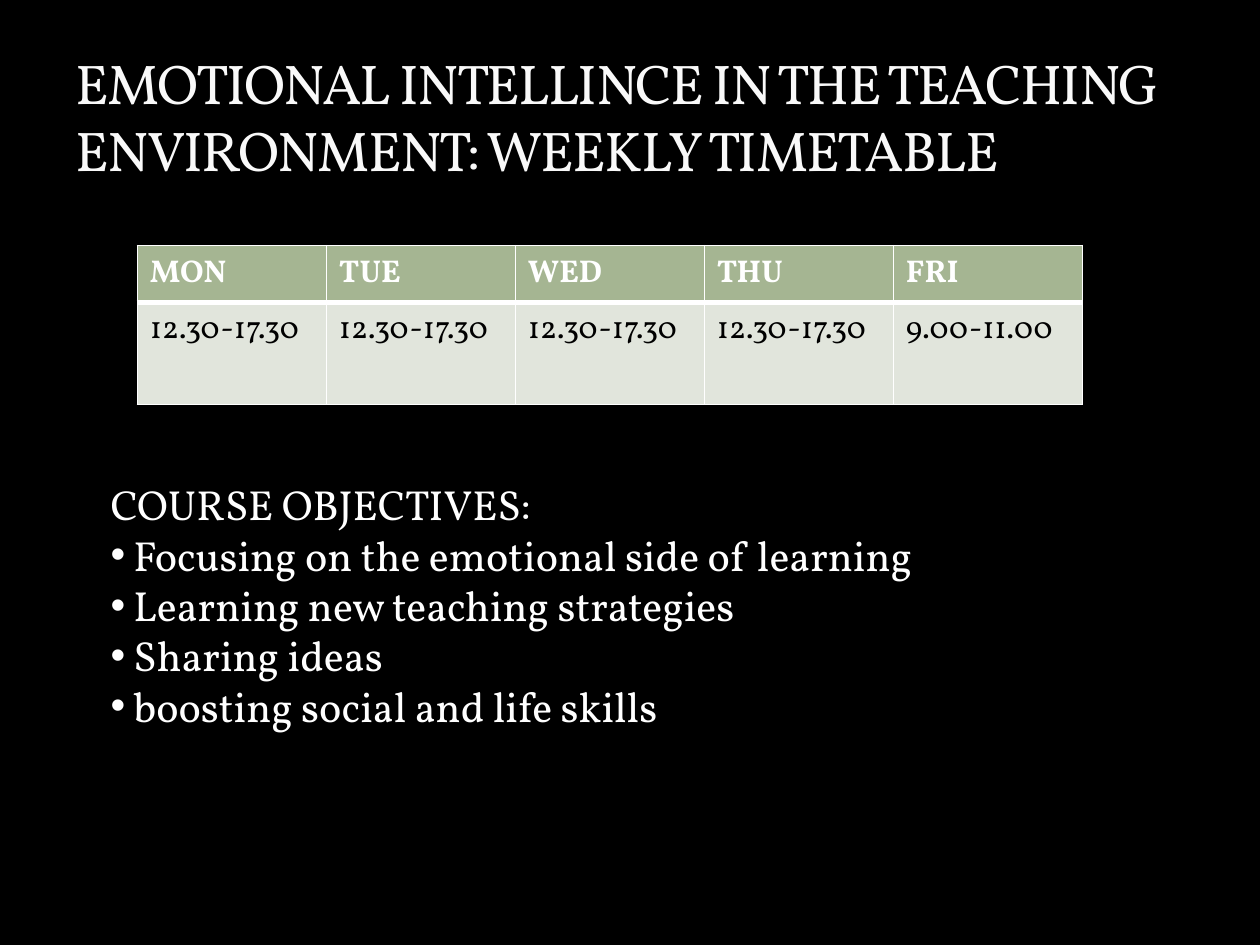
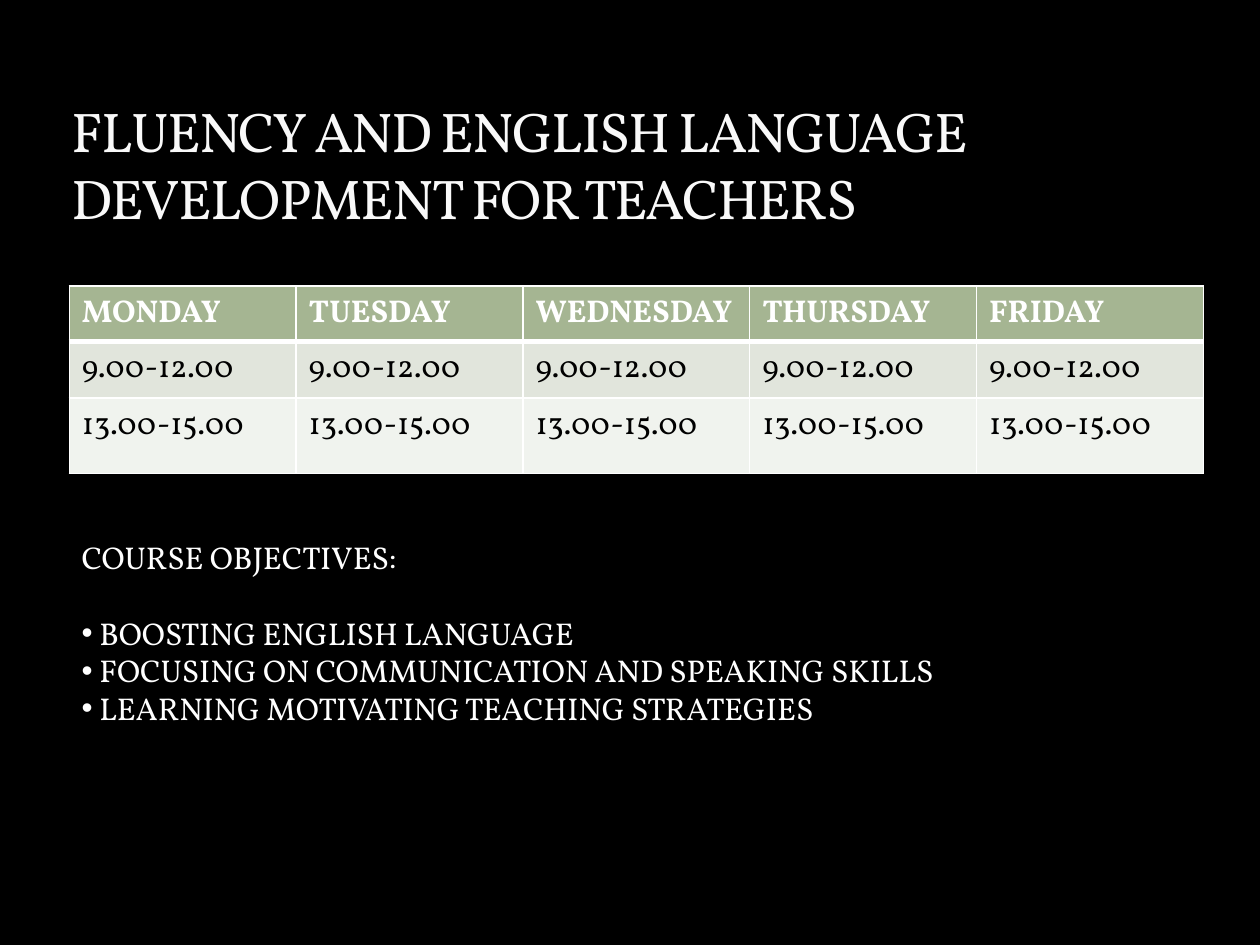
"""Build two timetable slides with course objectives."""
from lxml import etree
from pptx import Presentation
from pptx.dml.color import RGBColor
from pptx.enum.text import MSO_ANCHOR
from pptx.oxml.ns import qn
from pptx.util import Inches, Pt

BLACK = RGBColor(0x00, 0x00, 0x00)
WHITE = RGBColor(0xFF, 0xFF, 0xFF)
TITLE_WHITE = RGBColor(0xF9, 0xF9, 0xF9)
HEADER_GREEN = RGBColor(0xA5, 0xB5, 0x92)
ROW_FILLS = [RGBColor(0xE1, 0xE5, 0xDC), RGBColor(0xF0, 0xF3, 0xEE)]
FONT = "Vollkorn"

COURSES = [
    {
        "title": "EMOTIONAL INTELLINCE IN THE TEACHING ENVIRONMENT: WEEKLY TIMETABLE",
        "title_at": (0.5, 0.17),
        "days": ["MON", "TUE", "WED", "THU", "FRI"],
        "times": [["12.30-17.30"] * 4 + ["9.00-11.00"]],
        "table_at": (1.09, 1.95),
        "column_width": 1.5,
        "row_heights": [0.44, 0.81],
        "objectives": [
            "Focusing on the emotional side of learning",
            "Learning new teaching strategies",
            "Sharing ideas",
            "boosting social and life skills",
        ],
        "objectives_at": (0.78, 3.75, 8.05, 2.12),
        "size": 24,
        "heading_gap": 0,
    },
    {
        "title": "FLUENCY AND ENGLISH LANGUAGE DEVELOPMENT FOR TEACHERS",
        "title_at": (0.47, 0.55),
        "days": ["MONDAY", "TUESDAY", "WEDNESDAY", "THURSDAY", "FRIDAY"],
        "times": [["9.00-12.00"] * 5, ["13.00-15.00"] * 5],
        "table_at": (0.55, 2.27),
        "column_width": 1.8,
        "row_heights": [0.44, 0.45, 0.6],
        "objectives": [
            "BOOSTING ENGLISH LANGUAGE",
            "FOCUSING ON COMMUNICATION AND SPEAKING SKILLS",
            "LEARNING MOTIVATING TEACHING STRATEGIES",
        ],
        "objectives_at": (0.55, 4.22, 8.05, 1.62),
        "size": 18,
        "heading_gap": 21.6,
    },
]


def write(paragraph, words, size, color, bold=False):
    span = paragraph.add_run()
    span.text = words
    span.font.color.rgb = color
    for name, value in {"name": FONT, "size": Pt(size), "bold": bold}.items():
        setattr(span.font, name, value)
    return span


def add_box(page, place):
    box = page.shapes.add_textbox(*map(Inches, place))
    box.text_frame.word_wrap = True
    return box.text_frame


def add_title(page, words, place):
    frame = add_box(page, (*place, 9, 1.33))
    frame.vertical_anchor = MSO_ANCHOR.BOTTOM
    span = write(frame.paragraphs[0], words, 32, TITLE_WHITE)
    span.font._element.set("spc", "-100")


def add_borders(cell, widths):
    properties = cell._tc.get_or_add_tcPr()
    for index, (side, width) in enumerate(widths.items()):
        line = etree.Element(qn(f"a:ln{side}"), w=str(Pt(width)))
        fill = etree.SubElement(line, qn("a:solidFill"))
        etree.SubElement(fill, qn("a:srgbClr"), val=str(WHITE))
        properties.insert(index, line)


def add_timetable(page, course):
    rows = [course["days"], *course["times"]]
    heights = course["row_heights"]
    width = course["column_width"]
    size = (width * len(rows[0]), sum(heights))
    place = map(Inches, (*course["table_at"], *size))
    table = page.shapes.add_table(len(rows), len(rows[0]), *place).table
    for column in table.columns:
        column.width = Inches(width)
    for r, (row, height) in enumerate(zip(rows, heights)):
        table.rows[r].height = Inches(height)
        header = r == 0
        widths = {"L": 1, "R": 1, "T": 3 if r == 1 else 1, "B": 3 if header else 1}
        for c, words in enumerate(row):
            cell = table.cell(r, c)
            cell.fill.solid()
            cell.fill.fore_color.rgb = HEADER_GREEN if header else ROW_FILLS[r - 1]
            write(cell.text_frame.paragraphs[0], words, 18, WHITE if header else BLACK, header)
            add_borders(cell, widths)


def add_objectives(page, course):
    size = course["size"]
    frame = add_box(page, course["objectives_at"])
    heading = frame.paragraphs[0]
    heading.space_after = Pt(course["heading_gap"])
    write(heading, "COURSE OBJECTIVES:", size, WHITE)
    indent = Inches(round(size / 130, 2))
    for objective in course["objectives"]:
        para = frame.add_paragraph()
        properties = para._p.get_or_add_pPr()
        properties.set("marL", str(indent))
        properties.set("indent", str(-indent))
        etree.SubElement(properties, qn("a:buFont"), typeface="Arial")
        etree.SubElement(properties, qn("a:buChar"), char="•")
        write(para, objective, size, WHITE)


def main():
    deck = Presentation()
    deck.slide_width, deck.slide_height = Inches(10), Inches(7.5)
    for course in COURSES:
        page = deck.slides.add_slide(deck.slide_layouts[6])
        page.background.fill.solid()
        page.background.fill.fore_color.rgb = BLACK
        add_timetable(page, course)
        add_title(page, course["title"], course["title_at"])
        add_objectives(page, course)
    deck.save("out.pptx")


if __name__ == "__main__":
    main()
